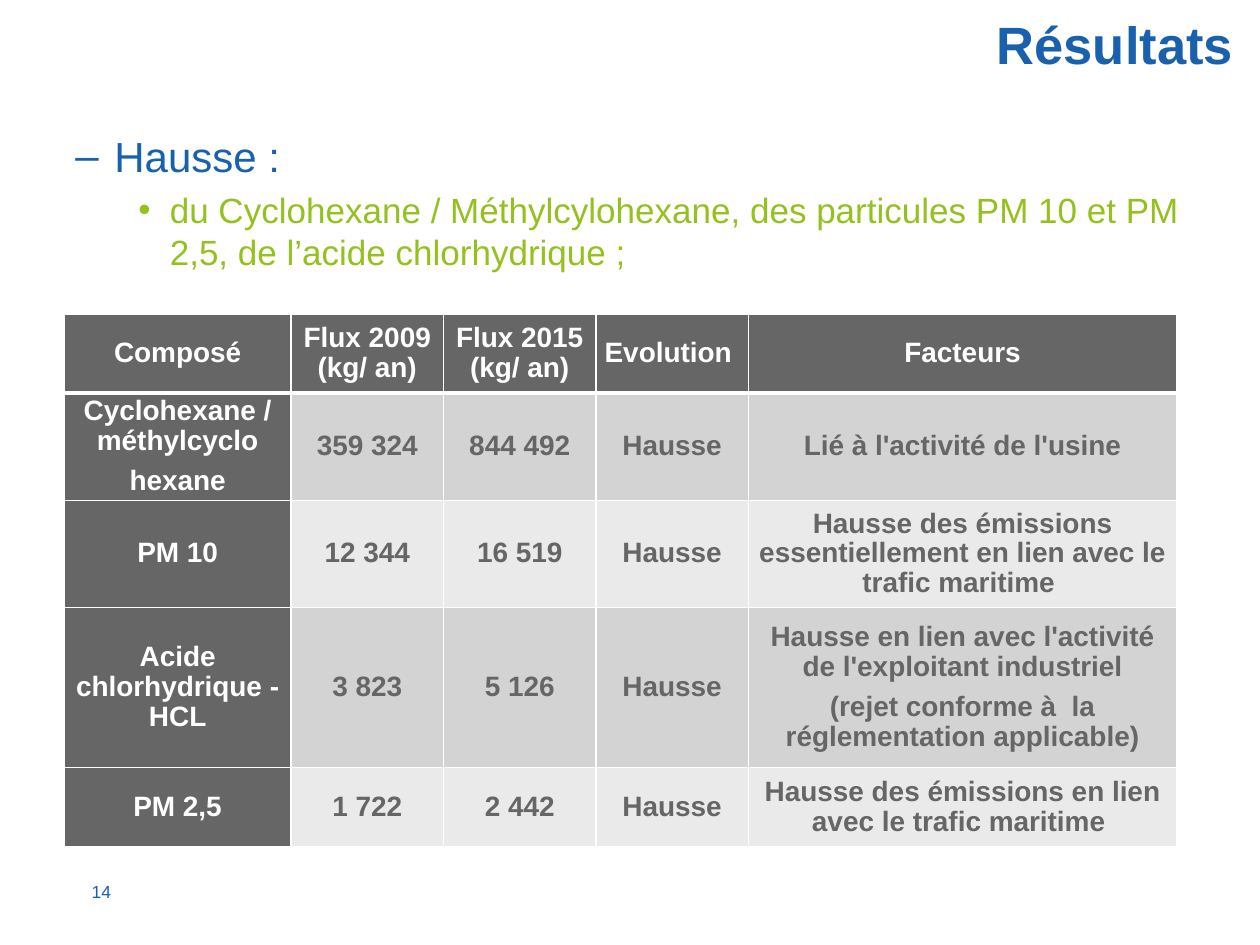
from lxml import etree
from pptx import Presentation
from pptx.dml.color import RGBColor
from pptx.enum import text
from pptx.oxml import ns
from pptx.util import Inches, Pt

BLUE, GREEN, GREY, WHITE = "1961AC", "95C11F", "666666", "FFFFFF"
BANDS = ("D3D3D3", "EAEAEA")
LEFT, CENTER, RIGHT = (getattr(text.PP_ALIGN, side) for side in ("LEFT", "CENTER", "RIGHT"))
TOP, MIDDLE = text.MSO_ANCHOR.TOP, text.MSO_ANCHOR.MIDDLE

# Content: wording, size, colour, bullet, text indent, hanging indent, space before
outline = [
    ("Hausse\u00a0:", 24, BLUE, "–", 0.81, 0.31, 0),
    ("du Cyclohexane / Méthylcylohexane, des particules PM 10 et PM 2,5, "
     "de l’acide chlorhydrique\u00a0;", 20, GREEN, "•", 1.25, 0.25, 4),
]
# Each line break in a cell starts a new paragraph
emissions = [
    ("Composé", "Flux 2009 (kg/ an)", "Flux 2015 (kg/ an)", "Evolution ", "Facteurs"),
    ("Cyclohexane / méthylcyclo\nhexane", "359 324", "844 492", "Hausse",
     "Lié à l'activité de l'usine"),
    ("PM 10", "12 344", "16 519", "Hausse",
     "Hausse des émissions essentiellement en lien avec le trafic maritime "),
    ("Acide chlorhydrique - HCL", "3 823", "5 126", "Hausse",
     "Hausse en lien avec l'activité de l'exploitant industriel\n"
     "(rejet conforme à  la réglementation applicable)"),
    ("PM 2,5", "1 722", "2 442", "Hausse",
     "Hausse des émissions en lien avec le trafic maritime "),
]
column_widths = (1.8, 1.21, 1.21, 1.21, 3.4)
row_heights = (0.63, 0.85, 0.85, 1.27, 0.63)


def color(value):
    return RGBColor.from_string(value)


def set_all(target, values):
    for name, value in values.items():
        setattr(target, name, value)


def style(paragraph, size, ink, bold=False, **layout):
    set_all(paragraph, layout)
    set_all(paragraph.font, {"name": "Arial", "size": Pt(size), "bold": bold})
    paragraph.font.color.rgb = color(ink)


def add_frame(slide, box, anchor):
    frame = slide.shapes.add_textbox(*map(Inches, box)).text_frame
    set_all(frame, {"word_wrap": True, "vertical_anchor": anchor})
    return frame


def add_bullet(paragraph, mark, indent, hanging):
    props = paragraph._p.get_or_add_pPr()
    props.set("marL", str(Inches(indent)))
    props.set("indent", str(-Inches(hanging)))
    etree.SubElement(props, ns.qn("a:buFont"), typeface="Arial")
    etree.SubElement(props, ns.qn("a:buChar"), char=mark)


def add_borders(cell, bottom):
    props = cell._tc.get_or_add_tcPr()
    for side, width in (("L", 1), ("R", 1), ("T", 1), ("B", bottom)):
        line = etree.SubElement(props, ns.qn(f"a:ln{side}"), w=str(Pt(width)))
        fill = etree.SubElement(line, ns.qn("a:solidFill"))
        etree.SubElement(fill, ns.qn("a:srgbClr"), val=WHITE)


def fill_cell(cell, wording, fill, ink, bottom):
    add_borders(cell, bottom)
    cell.fill.solid()
    cell.fill.fore_color.rgb = color(fill)
    set_all(cell, {"vertical_anchor": MIDDLE,
                   "margin_left": Inches(0.05), "margin_right": Inches(0.05),
                   "margin_top": 0, "margin_bottom": 0})
    cell.text_frame.text = wording
    for i, paragraph in enumerate(cell.text_frame.paragraphs):
        style(paragraph, 16, ink, True, alignment=CENTER, line_spacing=0.96,
              space_before=Pt(6 if i else 0))


def main():
    deck = Presentation()
    set_all(deck, {"slide_width": Inches(10), "slide_height": Inches(7.5)})
    slide = deck.slides.add_slide(deck.slide_layouts[6])

    # Title and page number
    for wording, box, anchor, size, bold in (
        ("Résultats ", (2.29, 0.05, 7.71, 0.86), TOP, 30, True),
        ("14", (0.51, 6.94, 0.47, 0.27), MIDDLE, 10, False),
    ):
        frame = add_frame(slide, box, anchor)
        frame.text = wording
        style(frame.paragraphs[0], size, BLUE, bold, alignment=RIGHT)

    # Outline above the table
    frame = add_frame(slide, (0, 0.99, 10, 1.4), TOP)
    frame.text = "\n".join(item[0] for item in outline)
    for paragraph, item in zip(frame.paragraphs, outline):
        _, size, ink, mark, indent, hanging, before = item
        add_bullet(paragraph, mark, indent, hanging)
        style(paragraph, size, ink, alignment=LEFT, space_before=Pt(before))

    # Emissions table: dark header row and first column, banded values
    table = slide.shapes.add_table(
        len(row_heights), len(column_widths), Inches(0.51), Inches(2.49),
        Inches(sum(column_widths)), Inches(sum(row_heights))).table
    for column, width in zip(table.columns, column_widths):
        column.width = Inches(width)
    for r, (compound, height) in enumerate(zip(emissions, row_heights)):
        table.rows[r].height = Inches(height)
        for c, wording in enumerate(compound):
            heading = r == 0 or c == 0
            fill_cell(table.cell(r, c), wording,
                      GREY if heading else BANDS[(r - 1) % 2],
                      WHITE if heading else GREY, 1 if r else 3)

    deck.save("out.pptx")


if __name__ == "__main__":
    main()
